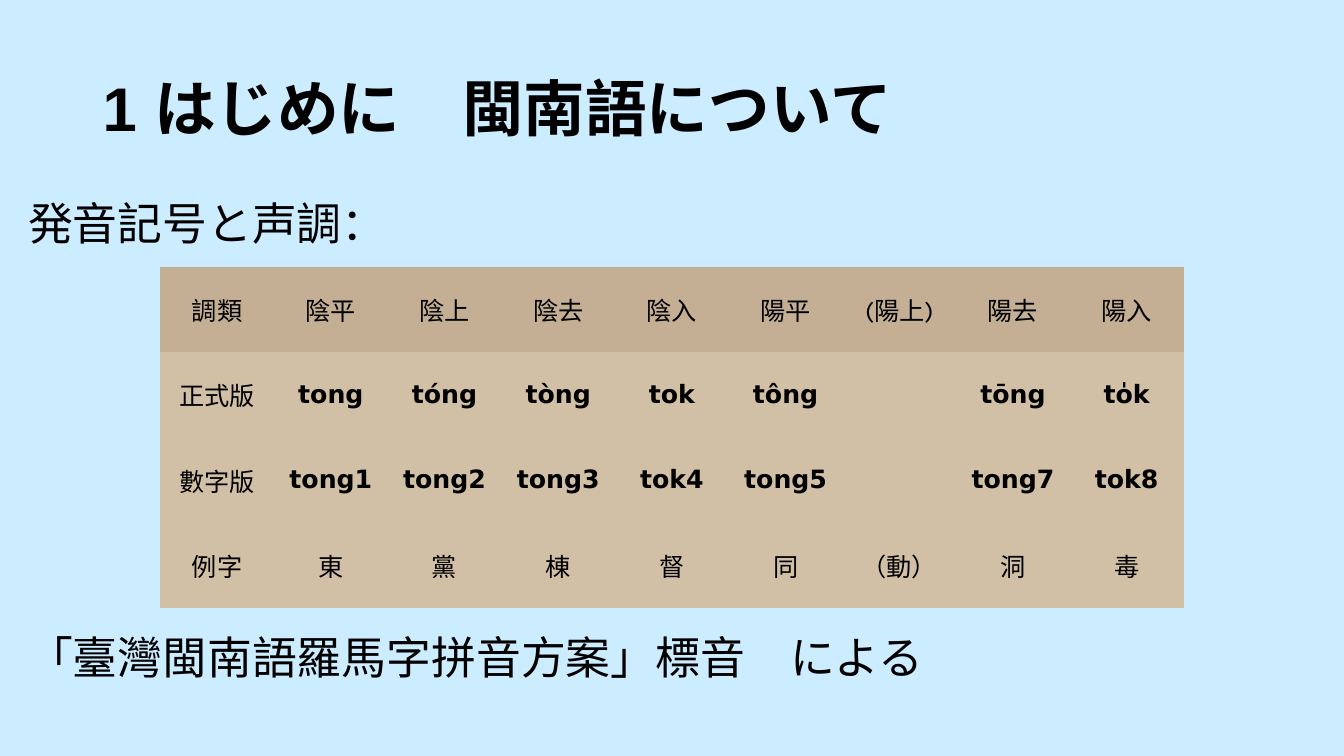
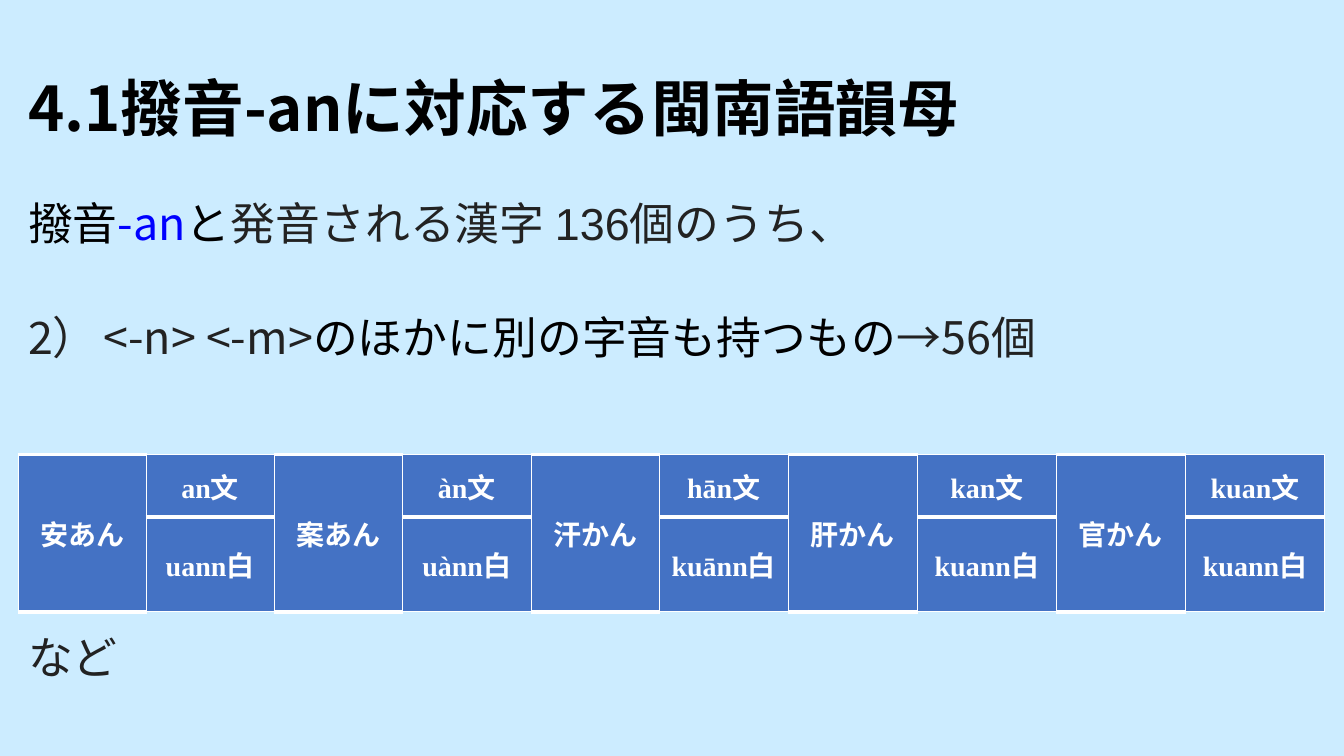
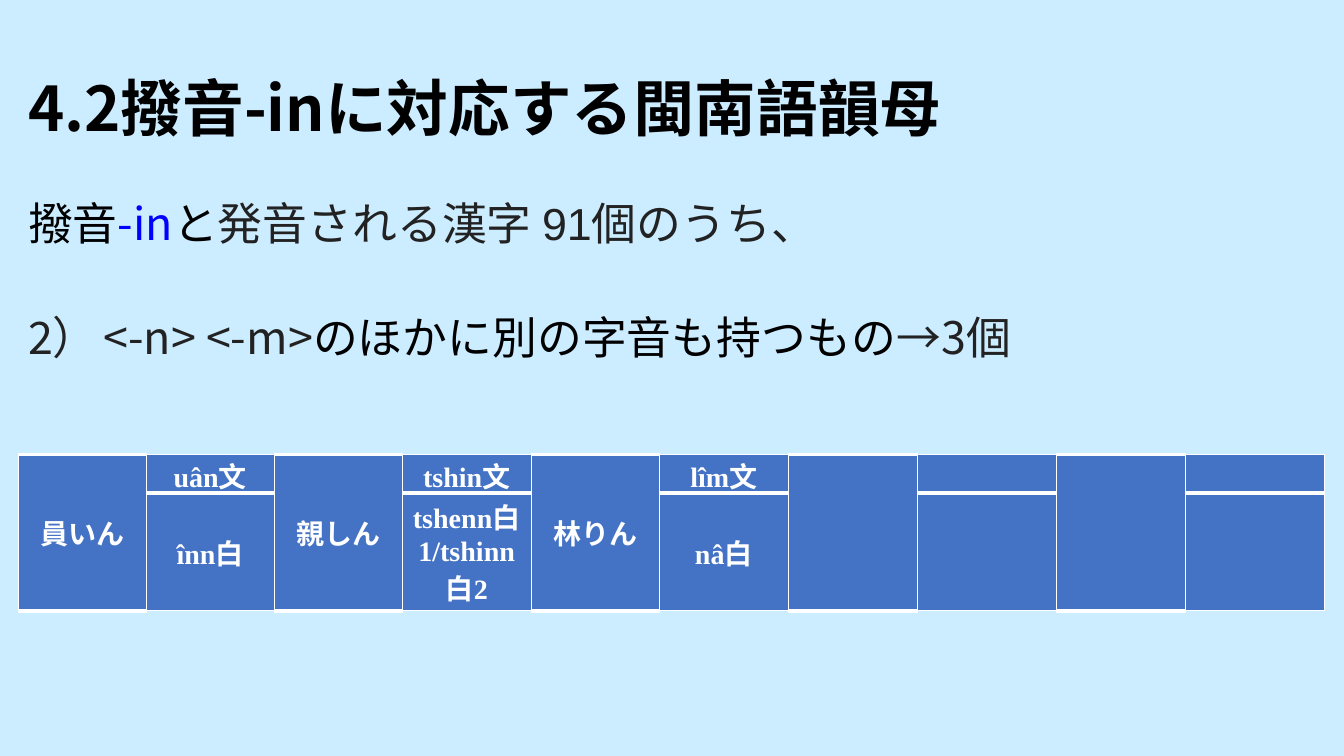
from lxml.etree import SubElement
from pptx import Presentation
from pptx.dml.color import RGBColor
from pptx.enum.text import MSO_ANCHOR, PP_ALIGN
from pptx.oxml.ns import qn
from pptx.util import Inches, Pt

SKY = RGBColor(0xCC, 0xEC, 0xFF)
BLACK = RGBColor(0, 0, 0)
GRAY = RGBColor(0x22, 0x22, 0x22)
LINK = RGBColor(0, 0, 0xFF)
WHITE = RGBColor(0xFF, 0xFF, 0xFF)
BLUE = RGBColor(0x44, 0x72, 0xC4)
TAN = RGBColor(0xC4, 0xAE, 0x94)
SAND = RGBColor(0xD1, 0xC0, 0xA5)

NOTO, ARIAL, TIMES = "Noto Sans CJK JP", "Arial", "Times New Roman"
PLAIN = "{2D5ABB26-0587-4C30-8999-92F81FD0307C}"  # table style without grid

# Text formats
HEAD = dict(size=Pt(44), bold=True, name=NOTO, color=BLACK)
BODY = dict(size=Pt(32), bold=False, name=NOTO, color=BLACK)
DARK = dict(BODY, color=GRAY)
LABEL = dict(size=Pt(18), bold=False, name="Karla", color=BLACK)
SOUND = dict(LABEL, bold=True, name="DejaVu Sans")
WORD = dict(size=Pt(20), bold=True, name=TIMES, color=WHITE)


class Deck:
    left, width = 0.18, 12.96

    def __init__(self):
        self.prs = Presentation()
        self.prs.slide_width, self.prs.slide_height = Inches(13.33), Inches(7.5)
        self.slide = None

    def page(self, title, left=left, **style):
        """Start a slide with its background and title."""
        self.slide = self.prs.slides.add_slide(self.prs.slide_layouts[6])
        fill = self.slide.background.fill
        fill.solid()
        fill.fore_color.rgb = SKY
        self.text([[(title, dict(HEAD, **style))]], left, 0.38, 1.45,
                  MSO_ANCHOR.MIDDLE)

    def run(self, para, text, style):
        run = para.add_run()
        run.text = text
        for key, value in style.items():
            if key == "color":
                run.font.color.rgb = value
            else:
                setattr(run.font, key, value)
        SubElement(run._r.get_or_add_rPr(), qn("a:ea"), typeface=NOTO)

    def text(self, lines, left, top, height, anchor=MSO_ANCHOR.TOP, gap=47):
        width = 13.33 - 2 * left
        box = self.slide.shapes.add_textbox(
            Inches(left), Inches(top), Inches(width), Inches(height))
        frame = box.text_frame
        frame.word_wrap = True
        frame.vertical_anchor = anchor
        frame.margin_top = frame.margin_bottom = 0
        for i, runs in enumerate(lines):
            para = frame.add_paragraph() if i else frame.paragraphs[0]
            para.line_spacing = 0.9
            if i:
                para.space_before = Pt(gap)
            for text, style in runs:
                self.run(para, text, style)

    def note(self, text, style):
        """One line below the table."""
        self.text([[(text, style)]], self.left, 6.31, 0.6)

    def table(self, left, top, cols, rows):
        frame = self.slide.shapes.add_table(
            len(rows), len(cols), Inches(left), Inches(top),
            Inches(sum(cols)), Inches(sum(rows)))
        table = frame.table
        table.first_row = table.horz_banding = False
        table._tbl.tblPr.find(qn("a:tableStyleId")).text = PLAIN
        for col, width in zip(table.columns, cols):
            col.width = Inches(width)
        for row, height in zip(table.rows, rows):
            row.height = Inches(height)
        return table

    def cell(self, cell, text, style, fill, side, edge):
        cell.margin_left = cell.margin_right = Inches(side)
        cell.margin_top = cell.margin_bottom = Inches(edge)
        cell.vertical_anchor = MSO_ANCHOR.MIDDLE
        cell.fill.solid()
        cell.fill.fore_color.rgb = fill
        if text:
            para = cell.text_frame.paragraphs[0]
            para.alignment = PP_ALIGN.CENTER
            self.run(para, text, style)

    def border(self, cell, top, bottom):
        """White edges; the sides are always 1 pt."""
        props = cell._tc.get_or_add_tcPr()
        for tag, width in (("lnL", 1), ("lnR", 1), ("lnT", top), ("lnB", bottom)):
            line = SubElement(props, qn("a:" + tag), w=str(Pt(width)))
            fill = SubElement(line, qn("a:solidFill"))
            SubElement(fill, qn("a:srgbClr"), val=str(WHITE))

    def tones(self, rows):
        """Tone chart: header row, two rows of spellings, one of examples."""
        count = len(rows[0])
        table = self.table(1.59, 2.65, [10.15 / count] * count, [0.845] * len(rows))
        for r, row in enumerate(rows):
            for c, text in enumerate(row):
                style = SOUND if c and r in (1, 2) else LABEL
                self.cell(table.cell(r, c), text, style, SAND if r else TAN,
                          0.06, 0.06)

    def pairs(self, words, rows):
        """Each word spans two rows beside its two readings."""
        cols = [1.27, 1.27, 1.27, 1.28, 1.27, 1.28, 1.28, 1.38, 1.28, 1.38]
        table = self.table(self.left, 4.51, cols, rows)
        for i, (word, upper, lower) in enumerate(words):
            left, right = 2 * i, 2 * i + 1
            table.cell(0, left).merge(table.cell(1, left))
            for r, c, text, top, bottom in (
                    (0, left, word, 3, 3), (1, left, "", 3, 3),
                    (0, right, upper, 1, 3), (1, right, lower, 3, 1)):
                cell = table.cell(r, c)
                self.border(cell, top, bottom)
                self.cell(cell, text, WORD, BLUE, 0.07, 0)

    def rhyme(self, number, ending, total, found, words, rows):
        """A slide on one ending and the words with other readings."""
        self.page(f"{number}撥音{ending}に対応する閩南語韻母")
        self.text([
            [("撥音", BODY), (ending, dict(BODY, color=LINK)), ("と", BODY),
             ("発音される漢字 ", DARK),
             (f"{total}個のうち、", dict(DARK, name=ARIAL))],
            [("2）", DARK), (" ", dict(BODY, size=Pt(18), name=TIMES)),
             ("<-n> <-m>", DARK),
             ("のほかに別の字音も持つもの", dict(BODY, name=ARIAL)),
             (f"→{found}個", DARK)],
        ], self.left, 2, 2)
        self.pairs(words, rows)


def main():
    deck = Deck()

    # Tones
    deck.page("1 はじめに　閩南語について", 0.92, name=ARIAL)
    deck.text([[("発音記号と声調：", BODY)]], deck.left, 2, 0.6)
    deck.tones([
        ["調類", "陰平", "陰上", "陰去", "陰入", "陽平", "(陽上)", "陽去", "陽入"],
        ["正式版", "tong", "tóng", "tòng", "tok", "tông", "", "tōng", "to̍k"],
        ["數字版", "tong1", "tong2", "tong3", "tok4", "tong5", "", "tong7", "tok8"],
        ["例字", "東", "黨", "棟", "督", "同", "（動）", "洞", "毒"],
    ])
    deck.note("「臺灣閩南語羅馬字拼音方案」標音　による", BODY)

    # Ending -an
    deck.rhyme("4.1", "-an", 136, 56, [
        ("安あん", "an文", "uann白"),
        ("案あん", "àn文", "uànn白"),
        ("汗かん", "hān文", "kuānn白"),
        ("肝かん", "kan文", "kuann白"),
        ("官かん", "kuan文", "kuann白"),
    ], [0.62, 0.94])
    deck.note("など", dict(DARK, name=ARIAL))

    # Ending -in
    deck.rhyme("4.2", "-in", 91, 3, [
        ("員いん", "uân文", "înn白"),
        ("親しん", "tshin文", "tshenn白1/tshinn白2"),
        ("林りん", "lîm文", "nâ白"),
    ] + [("", "", "")] * 2, [0.38, 1.17])

    deck.prs.save("out.pptx")


if __name__ == "__main__":
    main()
